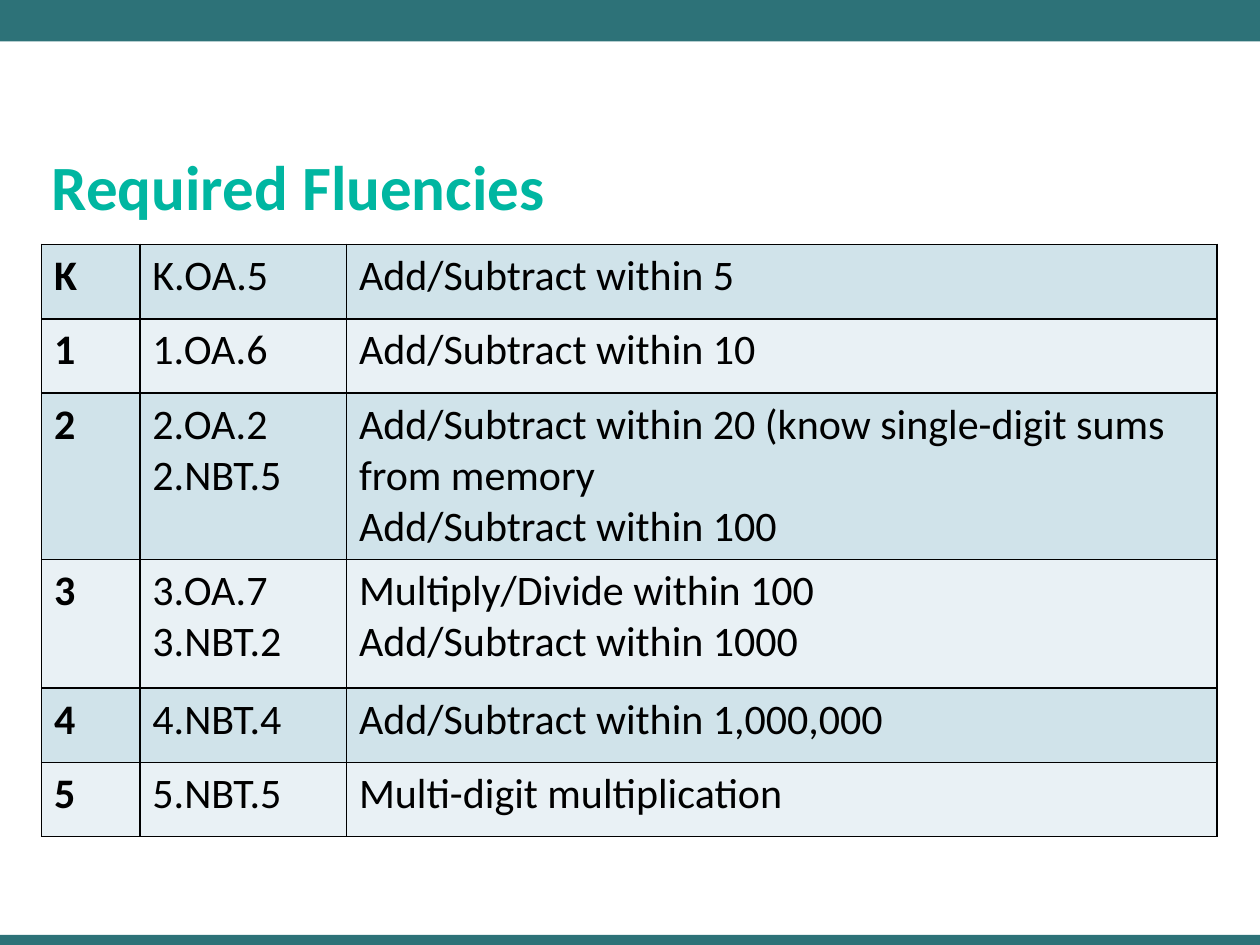
from lxml import etree
from pptx import Presentation
from pptx.dml.color import RGBColor
from pptx.enum.shapes import MSO_SHAPE
from pptx.enum.text import MSO_ANCHOR, PP_ALIGN
from pptx.oxml.ns import qn
from pptx.util import Inches, Pt

RECT = MSO_SHAPE.RECTANGLE
BOTTOM = MSO_ANCHOR.BOTTOM
LEFT = PP_ALIGN.LEFT

TEAL, MINT, BLACK = "2D7278", "00B6A1", "000000"
BANDS = ["D0E3EA", "E9F1F5"]
COLS = [0.78, 1.64, 6.91]
# Grade, standards, fluencies
ROWS = [
    ("K", ["K.OA.5"], ["Add/Subtract within 5"]),
    ("1", ["1.OA.6"], ["Add/Subtract within 10"]),
    ("2", ["2.OA.2", "2.NBT.5"],
     ["Add/Subtract within 20 (know single-digit sums from memory",
      "Add/Subtract within 100"]),
    ("3", ["3.OA.7", "3.NBT.2"],
     ["Multiply/Divide within 100", "Add/Subtract within 1000"]),
    ("4", ["4.NBT.4"], ["Add/Subtract within 1,000,000"]),
    ("5", ["5.NBT.5"], ["Multi-digit multiplication"]),
]


def add_run(para, text, size, color, bold):
    run = para.add_run()
    run.text = text
    run.font.name = "Calibri"
    run.font.size = Pt(size)
    run.font.bold = bold
    run.font.color.rgb = RGBColor.from_string(color)


def add_borders(cell):
    props = cell._tc.get_or_add_tcPr()
    for side in ("a:lnL", "a:lnR", "a:lnT", "a:lnB"):
        line = etree.SubElement(props, qn(side), w=str(Pt(1)))
        fill = etree.SubElement(line, qn("a:solidFill"))
        etree.SubElement(fill, qn("a:srgbClr"), val=BLACK)


prs = Presentation()
prs.slide_width, prs.slide_height = Inches(10), Inches(7.5)
slide = prs.slides.add_slide(prs.slide_layouts[5])

# Bands at the top and bottom edges
for top, height in [(0, 0.33), (7.42, 0.17)]:
    bar = slide.shapes.add_shape(
        RECT, 0, Inches(top), Inches(10), Inches(height))
    bar.shadow.inherit = False
    bar.fill.solid()
    bar.fill.fore_color.rgb = RGBColor.from_string(TEAL)
    bar.line.fill.background()

# Title
title = slide.shapes.title
title.left, title.top = Inches(0.31), Inches(0.33)
title.width, title.height = Inches(9), Inches(1.49)
title.text_frame.vertical_anchor = BOTTOM
para = title.text_frame.paragraphs[0]
para.alignment = LEFT
add_run(para, "Required Fluencies", 36, MINT, True)

# Table of fluencies by grade
table = slide.shapes.add_table(
    len(ROWS), len(COLS), Inches(0.33), Inches(1.94),
    Inches(sum(COLS)), Inches(4.4)).table
table.first_row = False
table.horz_banding = False
for col, width in zip(table.columns, COLS):
    col.width = Inches(width)

for r, (grade, codes, skills) in enumerate(ROWS):
    table.rows[r].height = Inches(1.02 if len(codes) > 1 else 0.59)
    for c, lines in enumerate([[grade], codes, skills]):
        cell = table.cell(r, c)
        add_borders(cell)
        cell.fill.solid()
        cell.fill.fore_color.rgb = RGBColor.from_string(BANDS[r % 2])
        frame = cell.text_frame
        for i, text in enumerate(lines):
            para = frame.add_paragraph() if i else frame.paragraphs[0]
            add_run(para, text, 24, BLACK, c == 0)

prs.save("out.pptx")
